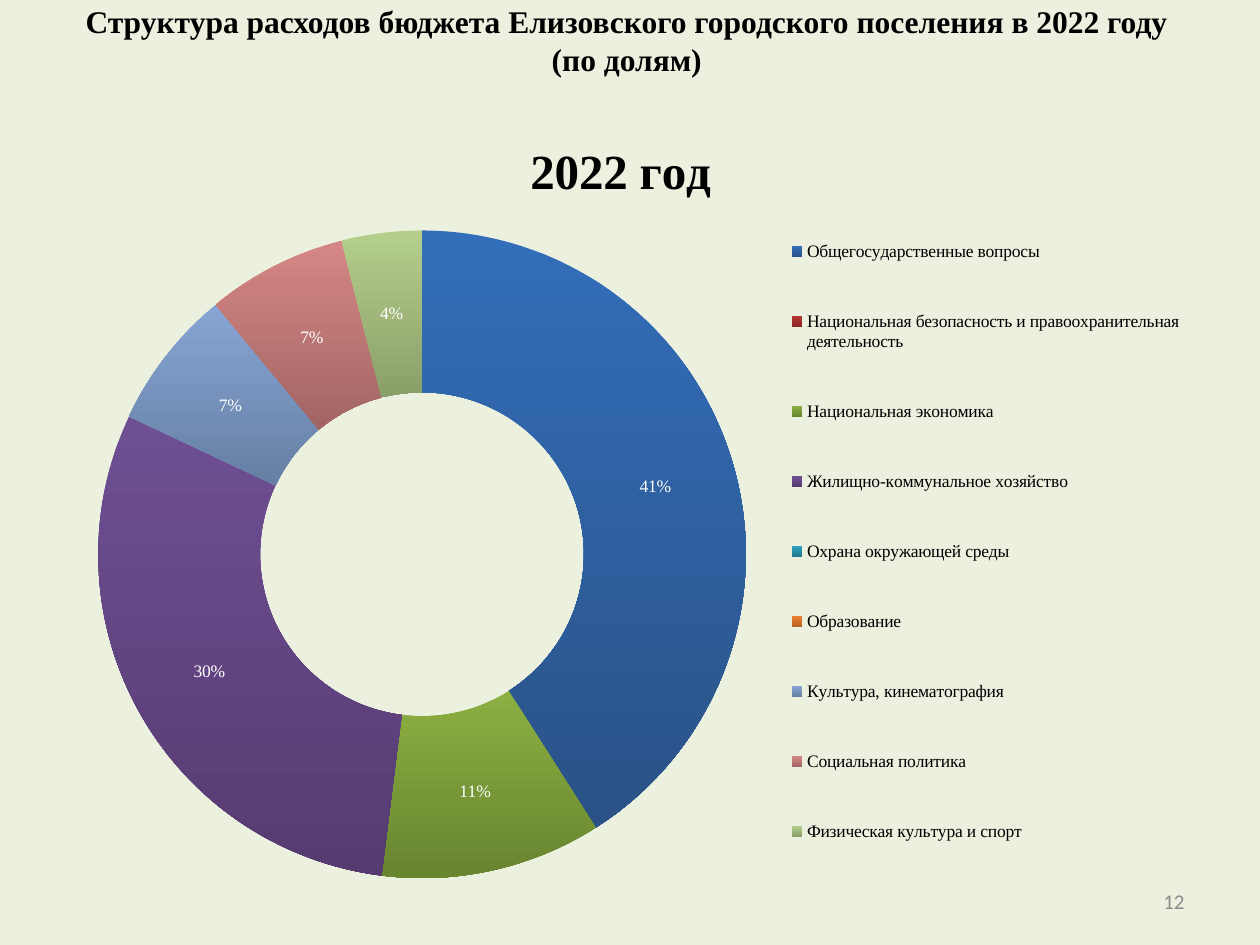
"""Build the slide on the structure of municipal budget spending in 2022."""
from dataclasses import dataclass

from lxml import etree
from pptx import Presentation
from pptx.chart.data import CategoryChartData
from pptx.dml.color import RGBColor
from pptx.enum.chart import XL_CHART_TYPE, XL_LEGEND_POSITION
from pptx.enum.text import MSO_ANCHOR, PP_ALIGN
from pptx.oxml.ns import qn
from pptx.util import Inches, Pt

DOUGHNUT = XL_CHART_TYPE.DOUGHNUT
LEGEND_RIGHT = XL_LEGEND_POSITION.RIGHT
MIDDLE = MSO_ANCHOR.MIDDLE
CENTER, RIGHT = PP_ALIGN.CENTER, PP_ALIGN.RIGHT


@dataclass(frozen=True)
class Theme:
    background: str = "EBF1DE"
    ink: str = "000000"
    label: str = "FFFFFF"
    muted: str = "8C8C8C"
    serif: str = "Times New Roman"
    sans: str = "Calibri"
    heading_size: int = 18
    chart_title_size: int = 28
    chart_size: int = 10
    number_size: int = 12


SPENDING = [
    ("Общегосударственные вопросы", 41, "336EBA", "2A5286"),
    ("Национальная безопасность и правоохранительная деятельность", 0, "B83431", "8A2624"),
    ("Национальная экономика", 11, "8CAF42", "68852F"),
    ("Жилищно-коммунальное хозяйство", 30, "6F4F94", "563B70"),
    ("Охрана окружающей среды", 0, "2FA0BD", "237A90"),
    ("Образование", 0, "EE8030", "B8621F"),
    ("Культура, кинематография", 7, "87A5D4", "667FA3"),
    ("Социальная политика", 7, "D68785", "A16563"),
    ("Физическая культура и спорт", 4, "B5CF8B", "8A9E69"),
]
EDUCATION = 5


class SlideBuilder:
    """Holds the theme and the current page."""

    def __init__(self, page, theme):
        self.page = page
        self.theme = theme
        fill = page.background.fill
        fill.solid()
        fill.fore_color.rgb = RGBColor.from_string(theme.background)

    def style(self, font, size, color, name, bold=False):
        font.size = Pt(size)
        font.color.rgb = RGBColor.from_string(color)
        font.name = name
        font.bold = bold

    def text(self, words, frame, align, size, color, name, bold=False):
        box = self.page.shapes.add_textbox(*map(Inches, frame))
        box.text_frame.word_wrap = True
        box.text_frame.vertical_anchor = MIDDLE
        para = box.text_frame.paragraphs[0]
        para.text = words
        para.alignment = align
        self.style(para.font, size, color, name, bold)

    def place(self, part, index, frame, lengths, from_edge=True):
        for old in part.findall(qn("c:layout")):
            part.remove(old)
        layout = etree.Element(qn("c:layout"))
        part.insert(index, layout)
        manual = etree.SubElement(layout, qn("c:manualLayout"))
        if part.tag == qn("c:plotArea"):
            etree.SubElement(manual, qn("c:layoutTarget")).set("val", "inner")
        if from_edge:
            for axis in "xy":
                etree.SubElement(manual, qn(f"c:{axis}Mode")).set("val", "edge")
        for key, length, whole in zip("xywh", lengths, frame[2:] * 2):
            etree.SubElement(manual, qn(f"c:{key}")).set("val", str(length / whole))

    def doughnut(self, title, rows, frame):
        theme = self.theme
        data = CategoryChartData()
        data.categories = [row[0] for row in rows]
        data.add_series(title, [row[1] for row in rows])
        chart = self.page.shapes.add_chart(DOUGHNUT, *map(Inches, frame), data).chart
        self.style(chart.font, theme.chart_size, theme.ink, theme.serif)

        chart.has_title = True
        para = chart.chart_title.text_frame.paragraphs[0]
        para.text = title
        self.style(para.font, theme.chart_title_size, theme.ink, theme.serif, True)

        chart.has_legend = True
        chart.legend.position = LEGEND_RIGHT
        chart.legend.include_in_layout = False

        plot = chart.plots[0]
        plot.vary_by_categories = True
        series = plot.series[0]
        labels = series.data_labels
        labels.show_percentage = True
        labels.show_value = False
        labels.number_format = "0%"
        labels.number_format_is_linked = False
        self.style(labels.font, theme.chart_size, theme.label, theme.serif)

        for index, (_, _, *shades) in enumerate(rows):
            slice_format = series.points[index].format
            slice_format.line.fill.background()
            fill = slice_format.fill
            fill.gradient()
            fill.gradient_angle = 270
            for stop, shade in zip(fill.gradient_stops, shades):
                stop.color.rgb = RGBColor.from_string(shade)

        moved = series.points[EDUCATION].data_label
        self.style(moved.font, theme.chart_size, theme.label, theme.serif)
        label = labels._element.find(qn("c:dLbl"))
        label.find(qn("c:showVal")).set("val", "0")
        label.find(qn("c:showPercent")).set("val", "1")

        self.place(label, 1, frame, (0.18, 0.1), from_edge=False)
        self.place(plot._element.getparent(), 0, frame, (0.62, 0.97, 5.14, 5.14))
        self.place(chart.legend._element, 1, frame, (6.02, 0.66, 3.28, 5.56))
        self.place(chart.chart_title._element, 1, frame, (3.98, 0.18))


def main():
    theme = Theme()
    deck = Presentation()
    deck.slide_width, deck.slide_height = Inches(10), Inches(7.5)
    builder = SlideBuilder(deck.slides.add_slide(deck.slide_layouts[6]), theme)
    builder.doughnut("2022 год", SPENDING, (0.16, 0.86, 9.64, 6.25))
    builder.text(
        "Структура расходов бюджета Елизовского городского поселения в 2022 году\v(по долям)",
        (0.31, 0.16, 9.33, 0.31), CENTER, theme.heading_size, theme.ink, theme.serif, True)
    builder.text("12", (7.17, 6.95, 2.33, 0.4), RIGHT,
                 theme.number_size, theme.muted, theme.sans)
    deck.save("out.pptx")


if __name__ == "__main__":
    main()
